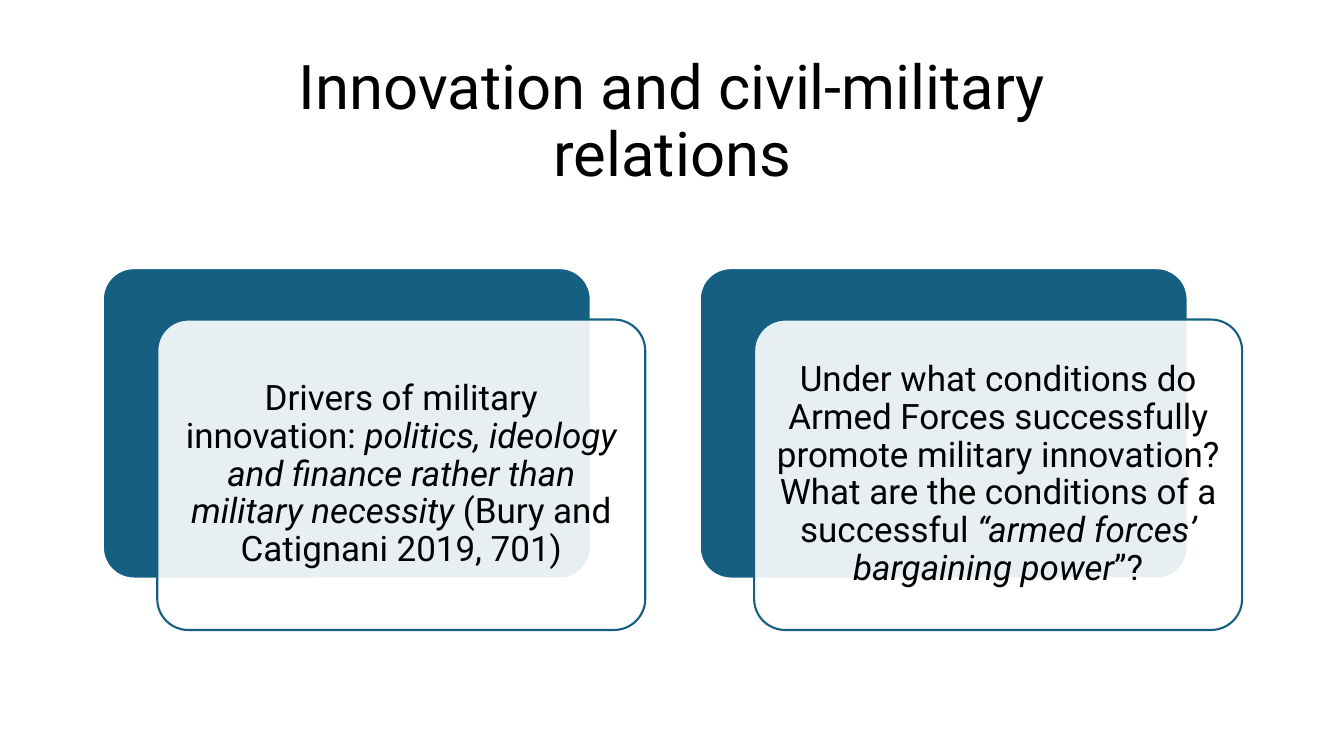
"""Build a slide with two layered cards on innovation and civil-military relations."""
from lxml.etree import SubElement
from pptx import Presentation
from pptx.dml.color import RGBColor
from pptx.enum.shapes import MSO_SHAPE
from pptx.enum.text import MSO_ANCHOR, MSO_AUTO_SIZE, PP_ALIGN
from pptx.oxml.ns import qn
from pptx.util import Inches, Pt

TITLE = "Innovation and civil-military relations"
CARDS = [
    [("Drivers of military innovation: ", False),
     ("politics, ideology and finance rather than military necessity ", True),
     ("(Bury and Catignani 2019, 701)", False)],
    [("Under what conditions do Armed Forces successfully promote military "
      "innovation? What are the conditions of a successful", False),
     (" “armed forces’ bargaining power", True),
     ("”?", False)],
]
FONT, BLACK, WHITE, TEAL = "Roboto", "000000", "FFFFFF", "156082"
LEFT, TOP, COLUMN_STEP = 1.02, 2.66, 5.92
CARD_WIDTH, CARD_HEIGHT = 4.84, 3.08
SHIFT_X, SHIFT_Y = 0.54, 0.51
TEXT_INSET = 0.09


def color(value):
    return RGBColor.from_string(value)


def write(frame, spans, size, inset=None):
    frame.word_wrap = True
    frame.auto_size = MSO_AUTO_SIZE.NONE
    frame.vertical_anchor = MSO_ANCHOR.MIDDLE
    if inset is not None:
        frame.margin_left = frame.margin_right = Inches(inset)
        frame.margin_top = frame.margin_bottom = Inches(inset)
    para = frame.paragraphs[0]
    para.alignment = PP_ALIGN.CENTER
    para.line_spacing = 0.9
    for text, italic in spans:
        span = para.add_run()
        span.text = text
        span.font.name = FONT
        span.font.size = Pt(size)
        span.font.italic = italic
        span.font.color.rgb = color(BLACK)


def add_card(page, left, top, fill, line, opacity=100):
    card = page.shapes.add_shape(
        MSO_SHAPE.ROUNDED_RECTANGLE, Inches(left), Inches(top),
        Inches(CARD_WIDTH), Inches(CARD_HEIGHT))
    card.adjustments[0] = 0.1
    card.shadow.inherit = False
    card.fill.solid()
    card.fill.fore_color.rgb = color(fill)
    card.line.color.rgb = color(line)
    card.line.width = Pt(1.5)
    if opacity < 100:
        shade = card.element.spPr.find(qn("a:solidFill"))[0]
        SubElement(shade, qn("a:alpha"), val=str(opacity * 1000))
    return card


def main():
    deck = Presentation()
    deck.slide_width, deck.slide_height = Inches(13.33), Inches(7.5)
    page = deck.slides.add_slide(deck.slide_layouts[5])

    title = page.shapes.title
    title.left, title.top = Inches(1.66), Inches(0.6)
    title.width, title.height = Inches(10.02), Inches(1.24)
    write(title.text_frame, [(TITLE, False)], 44)

    for column, spans in enumerate(CARDS):
        left = LEFT + column * COLUMN_STEP
        add_card(page, left, TOP, TEAL, WHITE)
        front = add_card(page, left + SHIFT_X, TOP + SHIFT_Y, WHITE, TEAL, 90)
        write(front.text_frame, spans, 25, TEXT_INSET)

    deck.save("out.pptx")


if __name__ == "__main__":
    main()
